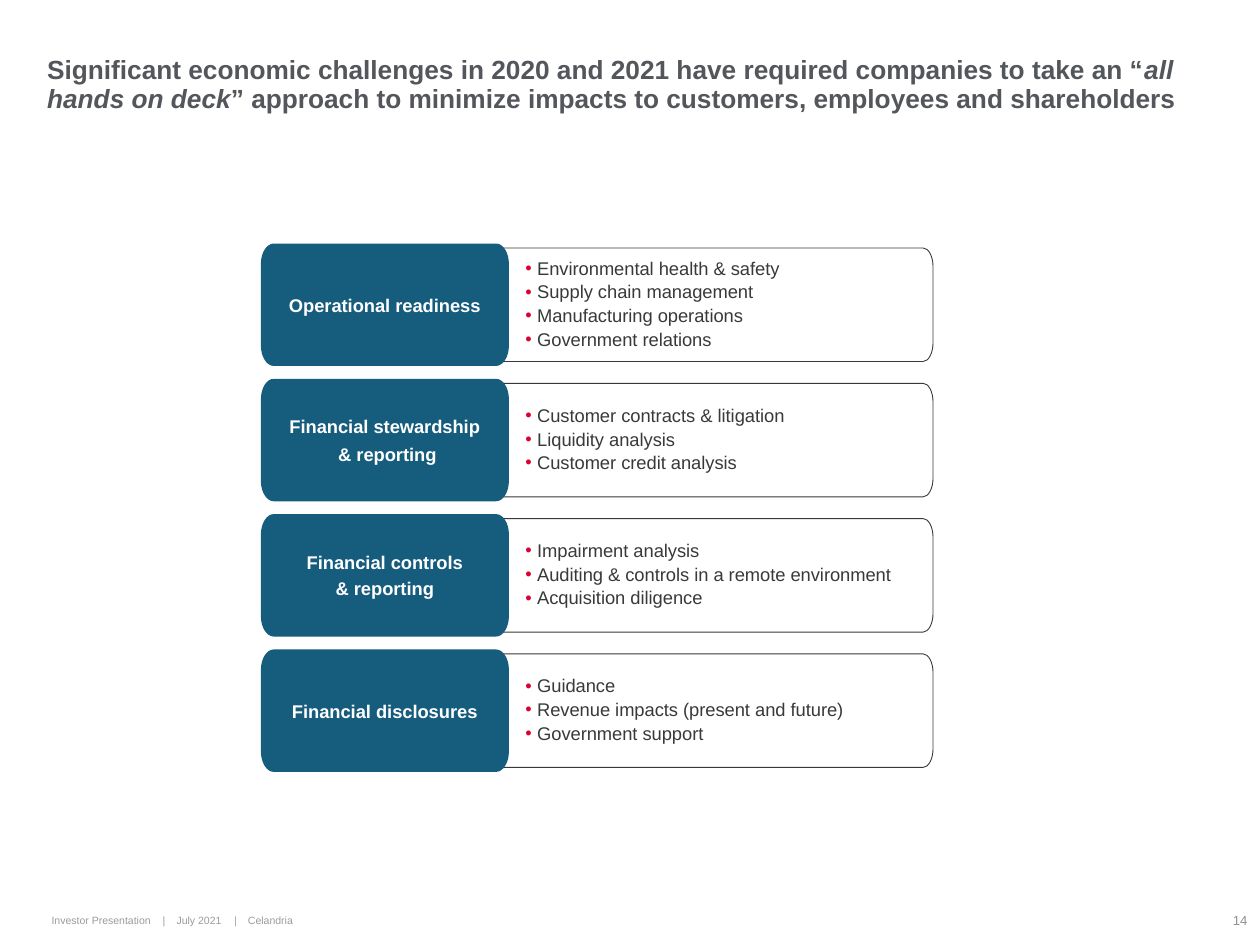
from collections import namedtuple
from dataclasses import dataclass

from lxml.etree import SubElement
from pptx import Presentation
from pptx.dml.color import RGBColor as Rgb
from pptx.enum.text import MSO_ANCHOR as Anchor, PP_ALIGN as Align
from pptx.oxml.ns import qn
from pptx.util import Cm, Pt

# Box lengths are centimetres
Box = namedtuple("Box", "left top width height")
Row = namedtuple("Row", "label items label_gap")


@dataclass(frozen=True)
class Theme:
    font: str = "Arial"
    title: Rgb = Rgb.from_string("53565A")
    body: Rgb = Rgb.from_string("373A36")
    accent: Rgb = Rgb.from_string("165C7D")
    bullet: str = "DD0032"
    number: Rgb = Rgb.from_string("919191")
    white: Rgb = Rgb.from_string("FFFFFF")
    title_size: float = 15
    text_size: float = 10.5
    footer_size: float = 6
    number_size: float = 7.5
    text_gap: float = 2.2


THEME = Theme()

TITLE = [
    ("Significant economic challenges in 2020 and 2021 have required companies to take an “", False),
    ("all hands on deck", True),
    ("” approach to minimize impacts to customers, employees and shareholders", False),
]
ROWS = [
    Row(["Operational readiness"],
        ["Environmental health & safety", "Supply chain management",
         "Manufacturing operations", "Government relations"], THEME.text_gap),
    Row(["Financial stewardship", " & reporting"],
        ["Customer contracts & litigation", "Liquidity analysis",
         "Customer credit analysis"], 3.5),
    Row(["Financial controls", "& reporting"],
        ["Impairment analysis", "Auditing & controls in a remote environment",
         "Acquisition diligence"], THEME.text_gap),
    Row(["Financial disclosures"],
        ["Guidance", "Revenue impacts (present and future)",
         "Government support"], THEME.text_gap),
]
FOOTER = ["Investor Presentation", "|", "July 2021", "|", "Celandria"]
FOOTER_TABS = [2.24, 2.52, 3.68, 3.96]


def add_run(paragraph, text, size, color, bold=False, italic=False):
    run = paragraph.add_run()
    run.text = text
    run.font.name, run.font.size = THEME.font, Pt(size)
    run.font.bold, run.font.italic = bold, italic
    run.font.color.rgb = color
    return run


def set_alpha(properties, percent):
    color = properties.find(qn("a:solidFill"))[0]
    SubElement(color, qn("a:alpha"), val=str(percent * 1000))


def set_frame(frame, margins, anchor=Anchor.MIDDLE):
    frame.word_wrap = True
    frame.vertical_anchor = anchor
    (frame.margin_left, frame.margin_top,
     frame.margin_right, frame.margin_bottom) = [Cm(m) for m in margins]


def next_paragraph(frame, index):
    return frame.add_paragraph() if index else frame.paragraphs[0]


def bend(line, start, corner, end):
    """Turn a straight corner cut into a curve towards the corner."""
    curve = line.getparent().makeelement(qn("a:cubicBezTo"))
    pull = 0.55
    controls = [[p + pull * (c - p) for p, c in zip(point, corner)] for point in (start, end)]
    for x, y in controls + [end]:
        SubElement(curve, qn("a:pt"), x=str(int(Cm(x))), y=str(int(Cm(y))))
    line.getparent().replace(line, curve)


def add_rounded(slide, box, radius_x, radius_y, round_left):
    """Box with elliptical corners, square on the left unless round_left."""
    width, height = box.width, box.height
    left_x, left_y = (radius_x, radius_y) if round_left else (0, 0)
    corners = [  # corner, where its curve starts, where it ends
        ((width, 0), (width - radius_x, 0), (width, radius_y)),
        ((width, height), (width, height - radius_y), (width - radius_x, height)),
        ((0, height), (left_x, height), (0, height - left_y)),
        ((0, 0), (0, left_y), (left_x, 0)),
    ]
    points = [point for _, start, end in corners for point in (start, end)]
    points = [(Cm(box.left + x), Cm(box.top + y)) for x, y in points]
    builder = slide.shapes.build_freeform(*points[0])
    builder.add_line_segments(points[1:], close=True)
    shape = builder.convert_to_shape()
    # Every second line cuts a corner
    lines = list(shape._element.iter(qn("a:lnTo")))[::2]
    for line, (corner, start, end) in zip(lines, corners):
        if start != end:
            bend(line, start, corner, end)
    shape.shadow.inherit = False
    shape.fill.solid()
    return shape


def add_bullet(paragraph):
    properties = paragraph._p.get_or_add_pPr()
    properties.set("marL", str(Cm(0.24)))
    properties.set("indent", str(-Cm(0.24)))
    color = SubElement(properties, qn("a:buClr"))
    SubElement(color, qn("a:srgbClr"), val=THEME.bullet)
    SubElement(properties, qn("a:buFont"), typeface=THEME.font)
    SubElement(properties, qn("a:buChar"), char="•")


def add_panel(slide, box, items):
    shape = add_rounded(slide, box, 0.2, 0.38, round_left=False)
    shape.fill.fore_color.rgb = THEME.white
    set_alpha(shape._element.spPr, 90)
    shape.line.color.rgb = THEME.body
    shape.line.width = Pt(0.5)
    set_frame(shape.text_frame, (0.51, 0.36, 0.61, 0.36))
    for index, item in enumerate(items):
        paragraph = next_paragraph(shape.text_frame, index)
        add_bullet(paragraph)
        paragraph.alignment = Align.LEFT
        paragraph.line_spacing = 0.9
        paragraph.space_after = Pt(THEME.text_gap)
        add_run(paragraph, item, THEME.text_size, THEME.body)


def add_label(slide, box, lines, gap):
    shape = add_rounded(slide, box, 0.26, 0.41, round_left=True)
    shape.fill.fore_color.rgb = THEME.accent
    shape.line.fill.background()
    set_frame(shape.text_frame, (0.25, 0.18, 0.25, 0.18))
    for index, line in enumerate(lines):
        paragraph = next_paragraph(shape.text_frame, index)
        paragraph.alignment = Align.CENTER
        paragraph.space_after = Pt(gap)
        add_run(paragraph, line, THEME.text_size, THEME.white, bold=True)


def add_rows(slide, box, rows):
    gap = 0.26
    height = (box.height - gap * (len(rows) - 1)) / len(rows)
    label_width, overlap, inset = 5.0, 0.18, 0.09
    panel_left = label_width - overlap
    for index, row in enumerate(rows):
        top = box.top + index * (height + gap)
        add_panel(slide, Box(box.left + panel_left, top + inset,
                             box.width - panel_left, height - 2 * inset), row.items)
        add_label(slide, Box(box.left, top, label_width, height), row.label, row.label_gap)


def add_title(slide, box):
    title = slide.shapes.title
    title.left, title.top, title.width, title.height = [Cm(length) for length in box]
    set_frame(title.text_frame, (0, 0.13, 0, 0.13), Anchor.TOP)
    paragraph = title.text_frame.paragraphs[0]
    paragraph.alignment = Align.LEFT
    paragraph.line_spacing = 0.9
    for text, italic in TITLE:
        add_run(paragraph, text, THEME.title_size, THEME.title, bold=True, italic=italic)


def add_footer_text(slide, box):
    shape = slide.shapes.add_textbox(*[Cm(length) for length in box])
    set_frame(shape.text_frame, (0.25, 0.13, 0.25, 0.13))
    return shape.text_frame.paragraphs[0]


def add_footer(slide, box):
    # Document details, aligned on tab stops
    paragraph = add_footer_text(slide, box._replace(width=7.92))
    tabs = SubElement(paragraph._p.get_or_add_pPr(), qn("a:tabLst"))
    for position in FOOTER_TABS:
        SubElement(tabs, qn("a:tab"), pos=str(Cm(position)), algn="l")
    run = add_run(paragraph, "\t".join(FOOTER), THEME.footer_size, THEME.body)
    set_alpha(run._r.rPr, 50)
    # Page number
    width = 1.02
    paragraph = add_footer_text(
        slide, box._replace(left=box.left + box.width - width, width=width))
    paragraph.alignment = Align.RIGHT
    add_run(paragraph, "14", THEME.number_size, THEME.number)


def main():
    presentation = Presentation()
    presentation.slide_width, presentation.slide_height = Cm(25.4), Cm(19.05)
    slide = presentation.slides.add_slide(presentation.slide_layouts[5])
    add_title(slide, Box(0.95, 1.02, 23.67, 0.76))
    add_rows(slide, Box(5.26, 4.91, 13.55, 10.65), ROWS)
    add_footer(slide, Box(0.79, 18.08, 24.61, 0.94))
    presentation.save("out.pptx")


if __name__ == "__main__":
    main()
